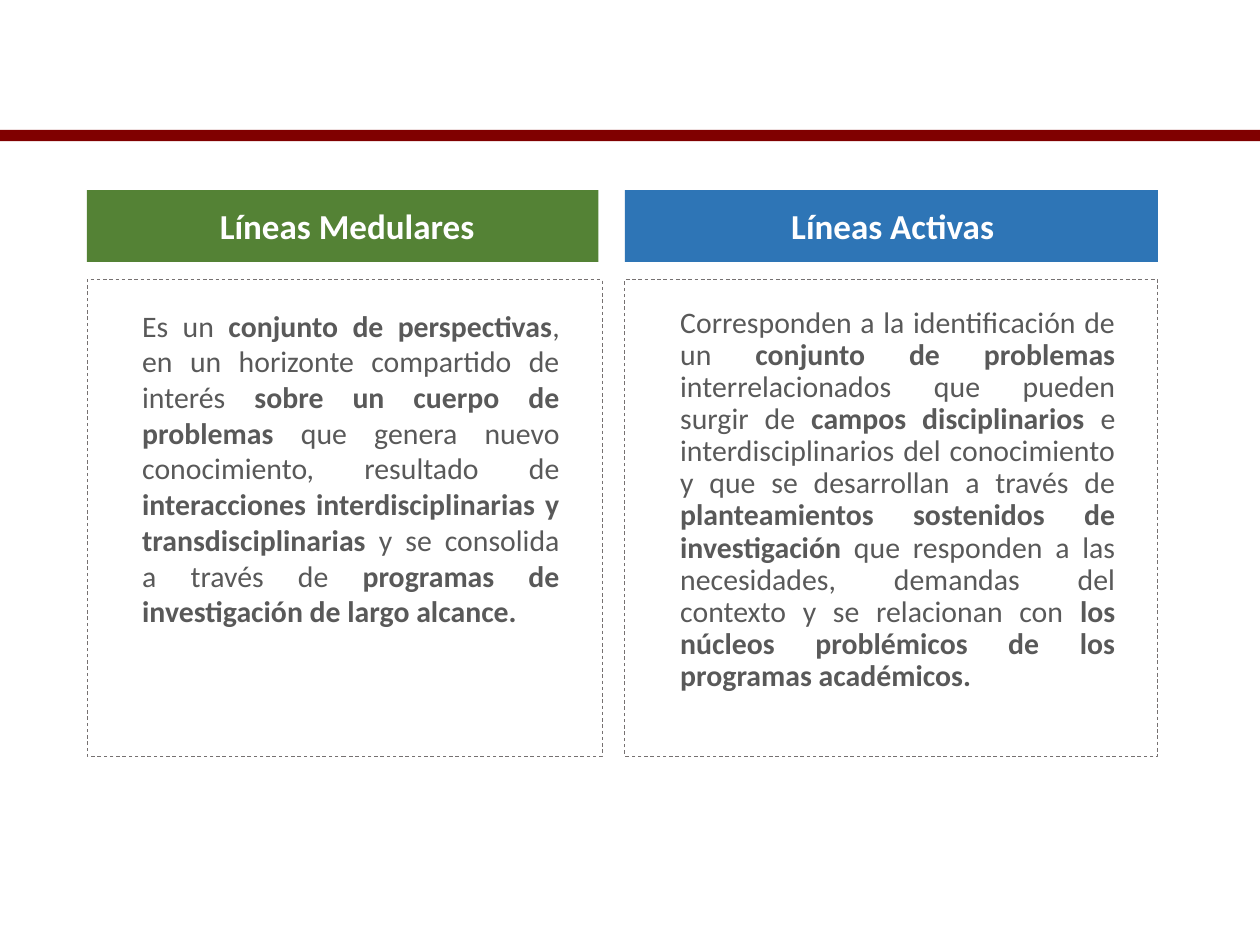
from pptx import Presentation
from pptx.dml.color import RGBColor
from pptx.enum.dml import MSO_LINE
from pptx.enum.shapes import MSO_SHAPE
from pptx.enum.text import PP_ALIGN
from pptx.util import Inches, Pt

MAROON = RGBColor(0x80, 0x00, 0x00)
GREEN = RGBColor(0x54, 0x82, 0x35)
BLUE = RGBColor(0x2E, 0x75, 0xB6)
WHITE = RGBColor(0xFF, 0xFF, 0xFF)
TEXT_GREY = RGBColor(0x59, 0x59, 0x59)
BORDER_GREY = RGBColor(0x76, 0x71, 0x71)

HEADER_TOP, HEADER_HEIGHT = 1.51, 0.57
PANEL_TOP, PANEL_HEIGHT = 2.22, 3.78

CORE_TEXT = [
    ("Es un ", False),
    ("conjunto de perspectivas", True),
    (", en un horizonte compartido de interés ", False),
    ("sobre un cuerpo de problemas ", True),
    ("que genera nuevo conocimiento, resultado de ", False),
    ("interacciones interdisciplinarias y transdisciplinarias ", True),
    ("y se consolida a través de ", False),
    ("programas de investigación de largo alcance.", True),
]
ACTIVE_TEXT = [
    ("Corresponden a la identificación de un ", False),
    ("conjunto de problemas ", True),
    ("interrelacionados que pueden surgir de ", False),
    ("campos disciplinarios ", True),
    ("e interdisciplinarios del conocimiento y que se desarrollan a través de ", False),
    ("planteamientos sostenidos de investigación ", True),
    ("que responden a las necesidades, demandas del contexto y se relacionan con ", False),
    ("los núcleos problémicos de los programas académicos.", True),
]


def add_rectangle(page, left, top, width, height, fill=None):
    box = page.shapes.add_shape(
        MSO_SHAPE.RECTANGLE, Inches(left), Inches(top), Inches(width), Inches(height)
    )
    box.shadow.inherit = False
    if fill is None:
        box.fill.background()
        box.line.color.rgb = BORDER_GREY
        box.line.width = Pt(0.5)
        box.line.dash_style = MSO_LINE.DASH
    else:
        box.fill.solid()
        box.fill.fore_color.rgb = fill
        box.line.fill.background()


def add_text(page, left, top, width, height, parts, size, color, align):
    box = page.shapes.add_textbox(
        Inches(left), Inches(top), Inches(width), Inches(height)
    )
    box.text_frame.word_wrap = True
    para = box.text_frame.paragraphs[0]
    para.alignment = align
    para.font.name = "Calibri"
    para.font.size = Pt(size)
    para.font.color.rgb = color
    for text, bold in parts:
        span = para.add_run()
        span.text = text
        span.font.bold = bold
    return para


def add_column(page, left, header_width, panel_width, color, title, title_inset,
               parts, text_inset, text_width, text_height):
    add_rectangle(page, left, HEADER_TOP, header_width, HEADER_HEIGHT, color)
    add_text(page, left + title_inset, HEADER_TOP + 0.06, 3.85, 0.44,
             [(title, True)], 20, WHITE, PP_ALIGN.CENTER)
    add_rectangle(page, left, PANEL_TOP, panel_width, PANEL_HEIGHT)
    return add_text(page, left + text_inset, PANEL_TOP + 0.17, text_width, text_height,
                    parts, 17, TEXT_GREY, PP_ALIGN.JUSTIFY)


def main():
    deck = Presentation()
    deck.slide_width, deck.slide_height = Inches(10), Inches(7.5)
    page = deck.slides.add_slide(deck.slide_layouts[6])
    add_rectangle(page, 0, 1.03, 10, 0.09, MAROON)
    add_column(page, 0.69, 4.06, 4.09, GREEN, "Líneas Medulares", 0.14,
               CORE_TEXT, 0.34, 3.51, 2.98)
    active_para = add_column(page, 4.96, 4.23, 4.23, BLUE, "Líneas Activas", 0.2,
                             ACTIVE_TEXT, 0.34, 3.65, 3.19)
    active_para.line_spacing = 0.9
    deck.save("out.pptx")


if __name__ == "__main__":
    main()
